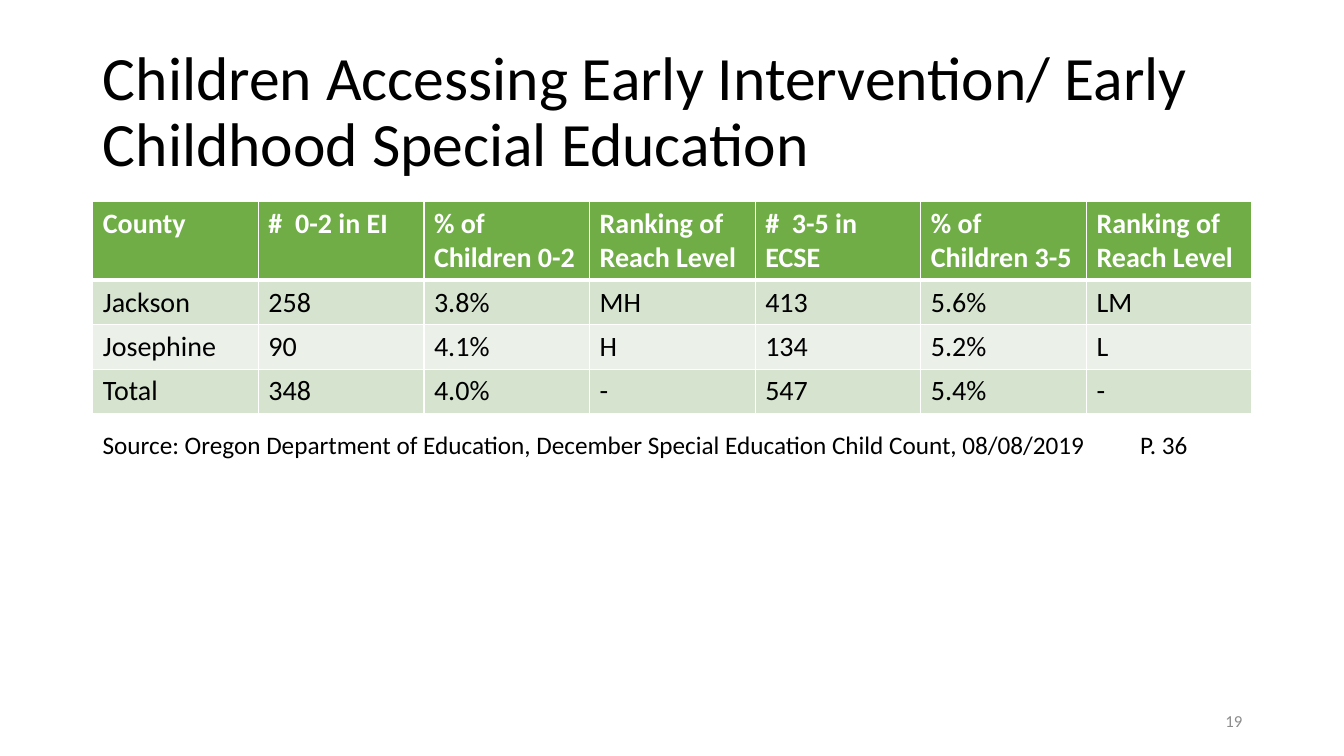
from lxml.etree import SubElement
from pptx import Presentation
from pptx.dml.color import RGBColor
from pptx.enum.text import MSO_ANCHOR as Anchor, PP_ALIGN as Align
from pptx.oxml import parse_xml
from pptx.oxml.ns import nsdecls, qn
from pptx.util import Inches, Pt

COLORS = {
    "text": "000000",
    "header": "70AD47",
    "odd_row": "D5E3CF",
    "even_row": "EBF1E9",
    "white": "FFFFFF",
    "number": "8C8C8C",
}
FONT = "Calibri"
LEFT, WIDTH = 0.92, 11.5
HEADER_HEIGHT, ROW_HEIGHT = 0.77, 0.44

COUNTY_ROWS = [
    ["County", "#  0-2 in EI", "% of Children 0-2", "Ranking of Reach Level",
     "#  3-5 in ECSE", "% of Children 3-5", "Ranking of Reach Level"],
    ["Jackson", "258", "3.8%", "MH", "413", "5.6%", "LM"],
    ["Josephine", "90", "4.1%", "H", "134", "5.2%", "L"],
    ["Total", "348", "4.0%", "-", "547", "5.4%", "-"],
]


def format_text(frame, size, color, bold=False, align=Align.LEFT):
    for para in frame.paragraphs:
        para.alignment = align
        for span in para.runs:
            span.font.name = FONT
            span.font.size = Pt(size)
            span.font.bold = bold
            span.font.color.rgb = RGBColor.from_string(COLORS[color])


def add_title(page, left, top, width, height):
    title = page.shapes.title
    title.left, title.top = Inches(left), Inches(top)
    title.width, title.height = Inches(width), Inches(height)
    frame = title.text_frame
    frame.text = "Children Accessing Early Intervention/ Early Childhood Special Education"
    frame.vertical_anchor = Anchor.MIDDLE
    frame.paragraphs[0].line_spacing = 0.9
    format_text(frame, 44, "text")


def set_borders(cell, top, bottom):
    """Draw white cell borders; top and bottom are widths in points."""
    widths = {"lnL": 1, "lnR": 1, "lnT": top, "lnB": bottom}
    properties = cell._tc.get_or_add_tcPr()
    for index, (side, points) in enumerate(widths.items()):
        properties.insert(index, parse_xml(
            f'<a:{side} {nsdecls("a")} w="{Pt(points)}"><a:solidFill>'
            f'<a:srgbClr val="{COLORS["white"]}"/></a:solidFill></a:{side}>'))


def add_county_table(page, left, top, width):
    row_count, column_count = len(COUNTY_ROWS), len(COUNTY_ROWS[0])
    height = HEADER_HEIGHT + ROW_HEIGHT * (row_count - 1)
    table = page.shapes.add_table(row_count, column_count, Inches(left), Inches(top),
                                  Inches(width), Inches(height)).table
    for column in table.columns:
        column.width = Inches(width / column_count)
    for row, values in enumerate(COUNTY_ROWS):
        is_header = row == 0
        table.rows[row].height = Inches(HEADER_HEIGHT if is_header else ROW_HEIGHT)
        fill = "header" if is_header else "odd_row" if row % 2 else "even_row"
        for column, value in enumerate(values):
            cell = table.cell(row, column)
            cell.text = value
            cell.fill.solid()
            cell.fill.fore_color.rgb = RGBColor.from_string(COLORS[fill])
            set_borders(cell, top=3 if row == 1 else 1, bottom=3 if is_header else 1)
            format_text(cell.text_frame, 20, "white" if is_header else "text", is_header)


def add_text(page, text, left, top, width, height):
    frame = page.shapes.add_textbox(Inches(left), Inches(top),
                                    Inches(width), Inches(height)).text_frame
    frame.word_wrap = True
    frame.text = text
    return frame


def add_source_line(page, left, top, width, height):
    frame = add_text(page, "Source: Oregon Department of Education, December Special "
                     "Education Child Count, 08/08/2019\tP. 36", left, top, width, height)
    tabs = SubElement(frame.paragraphs[0]._p.get_or_add_pPr(), qn("a:tabLst"))
    SubElement(tabs, qn("a:tab"), pos=str(Inches(10.29)), algn="l")
    format_text(frame, 18, "text")


def add_page_number(page, left, top, width, height):
    frame = add_text(page, "19", left, top, width, height)
    frame.vertical_anchor = Anchor.MIDDLE
    format_text(frame, 12, "number", align=Align.RIGHT)


def main():
    deck = Presentation()
    deck.slide_width, deck.slide_height = Inches(13.33), Inches(7.5)
    page = deck.slides.add_slide(deck.slide_layouts[5])
    add_title(page, LEFT, 0.4, WIDTH, 1.45)
    add_county_table(page, LEFT, 2, WIDTH)
    add_source_line(page, LEFT, 4.21, WIDTH, 0.4)
    add_page_number(page, LEFT + WIDTH - 3, 6.95, 3, 0.4)
    deck.save("out.pptx")


if __name__ == "__main__":
    main()
